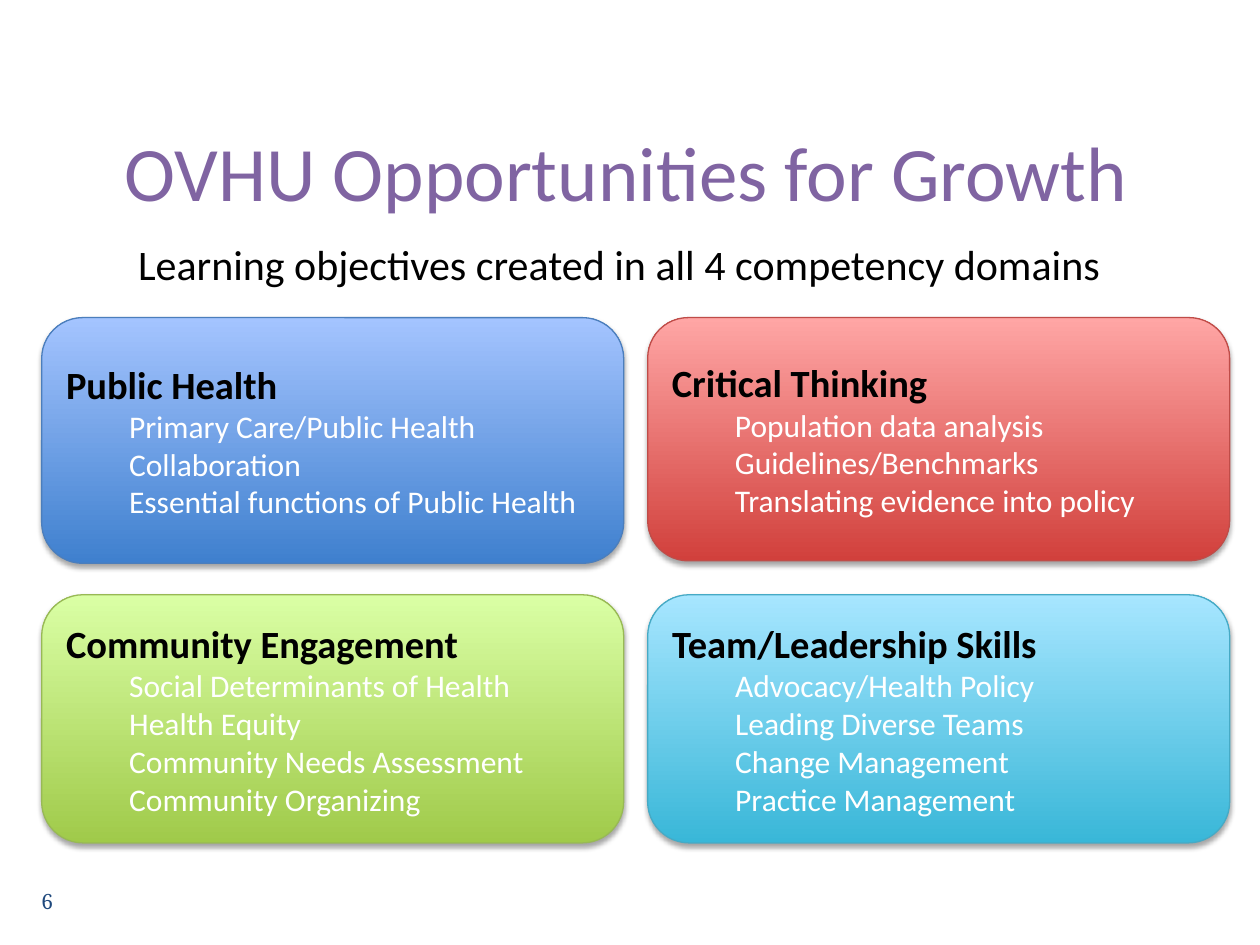
from lxml import etree
from pptx import Presentation
from pptx.dml.color import RGBColor
from pptx.enum.shapes import MSO_SHAPE
from pptx.enum.text import MSO_ANCHOR, PP_ALIGN
from pptx.oxml.ns import qn
from pptx.util import Pt

ROUNDED = MSO_SHAPE.ROUNDED_RECTANGLE
TOP, MIDDLE = MSO_ANCHOR.TOP, MSO_ANCHOR.MIDDLE
LEFT, CENTER = PP_ALIGN.LEFT, PP_ALIGN.CENTER

BLACK = RGBColor(0x00, 0x00, 0x00)
WHITE = RGBColor(0xFF, 0xFF, 0xFF)
PURPLE = RGBColor(0x80, 0x64, 0xA2)
NAVY = RGBColor(0x1F, 0x49, 0x7D)
# Each scheme: bottom of the gradient, top of the gradient, outline
BLUE = RGBColor(0x3F, 0x80, 0xCE), RGBColor(0xA4, 0xC4, 0xFF), RGBColor(0x4B, 0x7E, 0xBC)
RED = RGBColor(0xD1, 0x40, 0x3C), RGBColor(0xFF, 0xA6, 0xA5), RGBColor(0xBF, 0x4C, 0x48)
GREEN = RGBColor(0xA0, 0xCA, 0x4A), RGBColor(0xDA, 0xFF, 0xA5), RGBColor(0x98, 0xB9, 0x55)
AQUA = RGBColor(0x39, 0xB7, 0xD8), RGBColor(0xA7, 0xE6, 0xFF), RGBColor(0x46, 0xAA, 0xC5)

HEADING_FONT = {"name": "Calibri", "size": Pt(22), "bold": True}
OBJECTIVE_FONT = {"name": "Calibri", "size": Pt(18), "bold": False}
TITLE_FONT = {"name": "Calibri", "size": Pt(44)}
SUBTITLE_FONT = {"name": "Calibri", "size": Pt(24)}
NUMBER_FONT = {"name": "Noto Serif", "size": Pt(12)}

CARD_LEFT, CARD_TOP = 23.8, 181.5
CARD_WIDTH = 332.6
COLUMN_STEP, ROW_STEP = 346.3, 158.4

# Column, row, height, colours, heading, objectives
DOMAINS = [
    (0, 0, 140.4, BLUE, "Public Health",
     ["Primary Care/Public Health Collaboration",
      "Essential functions of Public Health"]),
    (0, 1, 141.8, GREEN, "Community Engagement",
     ["Social Determinants of Health", "Health Equity",
      "Community Needs Assessment", "Community Organizing"]),
    (1, 0, 139, RED, "Critical Thinking",
     ["Population data analysis", "Guidelines/Benchmarks",
      "Translating evidence into policy"]),
    (1, 1, 141.8, AQUA, "Team/Leadership Skills",
     ["Advocacy/Health Policy", "Leading Diverse Teams",
      "Change Management", "Practice Management"]),
]


def write_paragraph(paragraph, text, font_format, color, align=LEFT):
    paragraph.alignment = align
    run = paragraph.add_run()
    run.text = text
    for attribute, value in font_format.items():
        setattr(run.font, attribute, value)
    run.font.color.rgb = color


def add_label(slide, box, text, font_format, color, anchor=MIDDLE, align=LEFT):
    frame = slide.shapes.add_textbox(*map(Pt, box)).text_frame
    frame.word_wrap = True
    frame.vertical_anchor = anchor
    write_paragraph(frame.paragraphs[0], text, font_format, color, align)


def fill_gradient(shape, bottom, top):
    shape.fill.gradient()
    shape.fill.gradient_angle = 90
    for stop, position, color in zip(shape.fill.gradient_stops, (0, 1), (bottom, top)):
        stop.position = position
        stop.color.rgb = color


def add_soft_shadow(shape):
    shape.shadow.inherit = False
    effects = shape._element.spPr.find(qn("a:effectLst"))
    shadow = etree.SubElement(effects, qn("a:outerShdw"), blurRad=str(Pt(3.1)),
                              dist=str(Pt(1.8)), dir="5400000", rotWithShape="0")
    color = etree.SubElement(shadow, qn("a:srgbClr"), val=str(BLACK))
    etree.SubElement(color, qn("a:alpha"), val="35000")


def add_domain_card(slide, column, row, height, colors, heading, objectives):
    bottom, top, outline = colors
    card = slide.shapes.add_shape(
        ROUNDED, Pt(CARD_LEFT + column * COLUMN_STEP), Pt(CARD_TOP + row * ROW_STEP),
        Pt(CARD_WIDTH), Pt(height))
    fill_gradient(card, bottom, top)
    card.line.color.rgb = outline
    card.line.width = Pt(0.75)
    add_soft_shadow(card)

    frame = card.text_frame
    frame.word_wrap = True
    frame.vertical_anchor = MIDDLE
    write_paragraph(frame.paragraphs[0], heading, HEADING_FONT, BLACK)
    for objective in objectives:
        paragraph = frame.add_paragraph()
        paragraph.level = 1
        paragraph._p.get_or_add_pPr().set("marL", str(Pt(36)))
        write_paragraph(paragraph, objective, OBJECTIVE_FONT, WHITE)


def main():
    presentation = Presentation()
    presentation.slide_width, presentation.slide_height = Pt(720), Pt(540)
    slide = presentation.slides.add_slide(presentation.slide_layouts[6])

    add_label(slide, (16.6, 500.4, 46.8, 28.8), "6", NUMBER_FONT, NAVY)
    for domain in DOMAINS:
        add_domain_card(slide, *domain)
    add_label(slide, (64, 52.6, 593.3, 90), "OVHU Opportunities for Growth",
              TITLE_FONT, PURPLE)
    add_label(slide, (64, 132.5, 579.6, 36),
              "Learning objectives created in all 4 competency domains",
              SUBTITLE_FONT, BLACK, TOP, CENTER)

    presentation.save("out.pptx")


if __name__ == "__main__":
    main()
